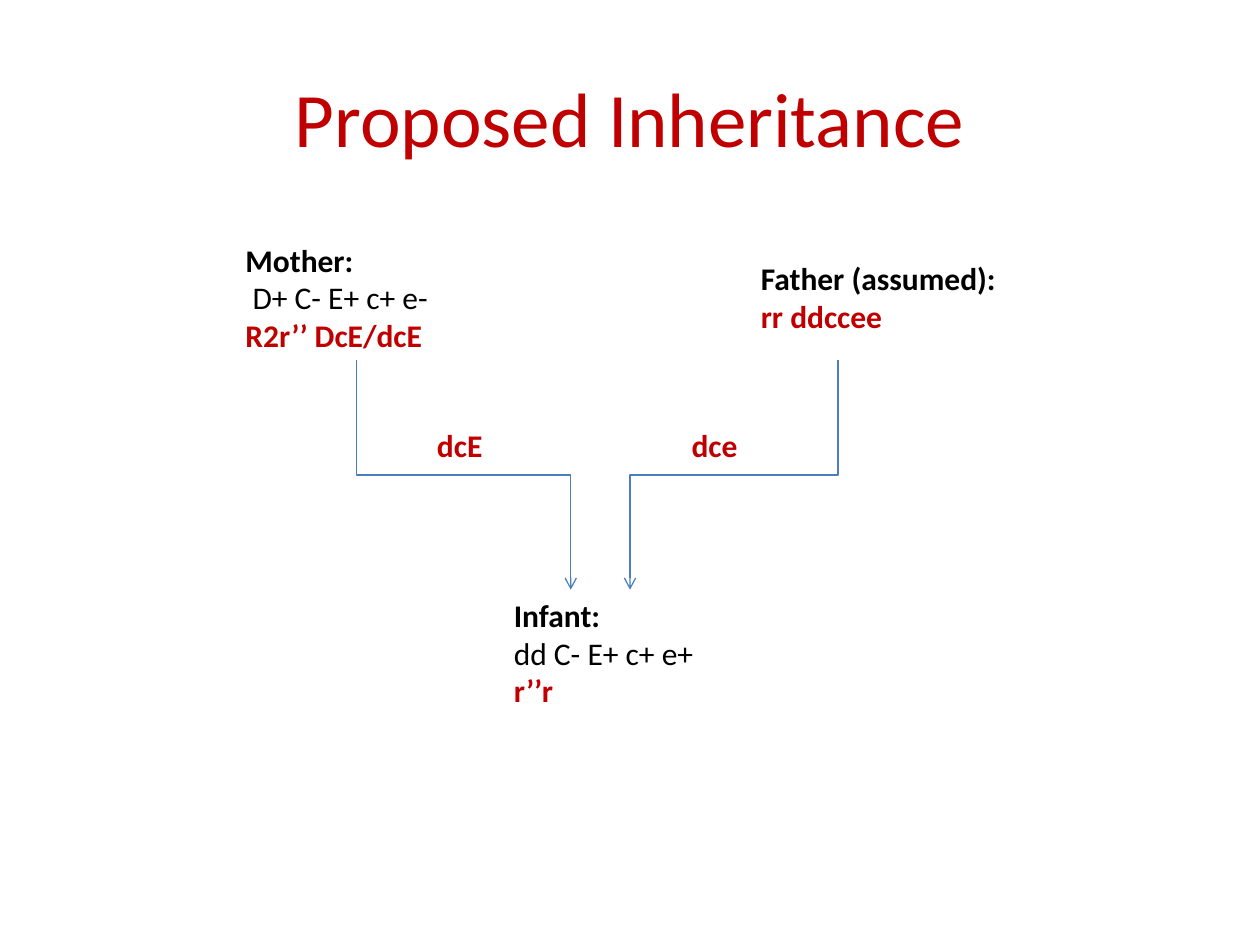
from lxml import etree
from pptx import Presentation
from pptx.dml.color import RGBColor
from pptx.enum.shapes import MSO_CONNECTOR
from pptx.enum.text import MSO_ANCHOR, MSO_AUTO_SIZE, PP_ALIGN
from pptx.oxml.ns import qn
from pptx.util import Inches, Pt

COLORS = {"accent": "C00000", "text": "000000", "line": "4B7EBC"}
FONT = "Calibri"


def style(paragraph, size, color, bold):
    font = paragraph.font
    font.name, font.size, font.bold = FONT, Pt(size), bold
    font.color.rgb = RGBColor.from_string(COLORS[color])


prs = Presentation()
prs.slide_width, prs.slide_height = Inches(10), Inches(7.5)
slide = prs.slides.add_slide(prs.slide_layouts[5])

# Title
title = slide.shapes.title
title.left, title.top = Inches(0.5), Inches(0.3)
title.width, title.height = Inches(9), Inches(1.25)
title.text_frame.text = "Proposed Inheritance"
title.text_frame.vertical_anchor = MSO_ANCHOR.MIDDLE
title.text_frame.paragraphs[0].alignment = PP_ALIGN.CENTER
style(title.text_frame.paragraphs[0], 44, "accent", False)

# Family members and inherited haplotypes: box, then (text, colour, bold) lines
people = [
    ((1.85, 1.86, 1.97, 1.01), [("Mother:", "text", True),
                                (" D+ C- E+ c+ e-", "text", False),
                                ("R2r’’ DcE/dcE", "accent", True)]),
    ((5.94, 2.01, 2.13, 0.71), [("Father (assumed):", "text", True),
                                ("rr ddccee", "accent", True)]),
    ((3.98, 4.68, 1.73, 1.01), [("Infant:", "text", True),
                                ("dd C- E+ c+ e+", "text", False),
                                ("r’’r", "accent", True)]),
    ((3.37, 3.33, 0.63, 0.4), [("dcE", "accent", True)]),
    ((5.39, 3.33, 0.63, 0.4), [("dce", "accent", True)]),
]
for box, lines in people:
    frame = slide.shapes.add_textbox(*map(Inches, box)).text_frame
    frame.word_wrap = True
    frame.auto_size = MSO_AUTO_SIZE.SHAPE_TO_FIT_TEXT
    frame.text = "\n".join(text for text, _, _ in lines)
    for paragraph, (_, color, bold) in zip(frame.paragraphs, lines):
        style(paragraph, 18, color, bold)

# Elbow arrows from each parent down to the infant, turned to leave vertically
parent_bottom, infant_top = 2.86, 4.68
drop = infant_top - parent_bottom
middle_y = (parent_bottom + infant_top) / 2
for parent_x, infant_x in [(2.83, 4.53), (6.65, 5)]:
    rightward = infant_x > parent_x
    middle_x = (parent_x + infant_x) / 2
    reach = abs(infant_x - parent_x)
    left, right = middle_x - drop / 2, middle_x + drop / 2
    begin_x, end_x = (right, left) if rightward else (left, right)
    arrow = slide.shapes.add_connector(
        MSO_CONNECTOR.ELBOW,
        Inches(begin_x), Inches(middle_y - reach / 2),
        Inches(end_x), Inches(middle_y + reach / 2))
    arrow.line.color.rgb = RGBColor.from_string(COLORS["line"])
    arrow.line.width = Pt(0.75)
    properties = arrow._element.spPr
    degrees = 270 if rightward else 90
    properties.find(qn("a:xfrm")).set("rot", str(degrees * 60000))
    etree.SubElement(properties.find(qn("a:ln")), qn("a:tailEnd"), type="arrow")
    etree.SubElement(properties, qn("a:effectLst"))

prs.save("out.pptx")
